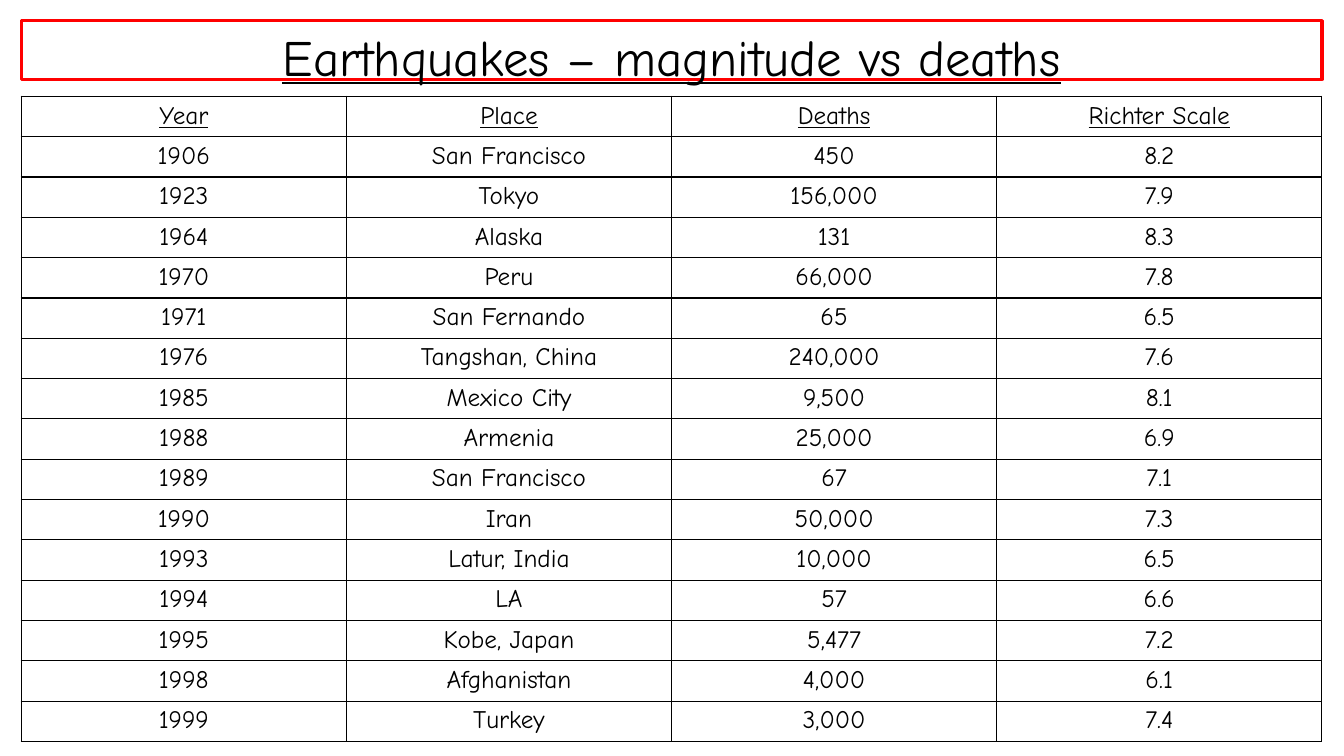
from lxml import etree
from pptx import Presentation
from pptx.dml.color import RGBColor
from pptx.enum.shapes import MSO_SHAPE
from pptx.enum.text import MSO_ANCHOR, PP_ALIGN
from pptx.oxml.ns import qn
from pptx.util import Pt

RECT = MSO_SHAPE.RECTANGLE
TOP = MSO_ANCHOR.TOP
CENTER = PP_ALIGN.CENTER

ROWS = [
    ("Year", "Place", "Deaths", "Richter Scale"),
    ("1906", "San Francisco", "450", "8.2"),
    ("1923", "Tokyo", "156,000", "7.9"),
    ("1964", "Alaska", "131", "8.3"),
    ("1970", "Peru", "66,000", "7.8"),
    ("1971", "San Fernando", "65", "6.5"),
    ("1976", "Tangshan, China", "240,000", "7.6"),
    ("1985", "Mexico City", "9,500", "8.1"),
    ("1988", "Armenia", "25,000", "6.9"),
    ("1989", "San Francisco", "67", "7.1"),
    ("1990", "Iran", "50,000", "7.3"),
    ("1993", "Latur, India", "10,000", "6.5"),
    ("1994", "LA", "57", "6.6"),
    ("1995", "Kobe, Japan", "5,477", "7.2"),
    ("1998", "Afghanistan", "4,000", "6.1"),
    ("1999", "Turkey", "3,000", "7.4"),
]


def color(value):
    return RGBColor.from_string(value)


class Deck:
    """Hold the style and the current slide, and draw its elements."""

    font = "Comic Neue"
    ink = "000000"
    accent = "FF0000"

    def __init__(self, width, height):
        self.prs = Presentation()
        self.prs.slide_width, self.prs.slide_height = Pt(width), Pt(height)
        self.s = self.prs.slides.add_slide(self.prs.slide_layouts[6])

    def text(self, tf, text, size, underline):
        p = tf.paragraphs[0]
        p.alignment = CENTER
        r = p.add_run()
        r.text = text
        style = {"name": self.font, "size": Pt(size), "underline": underline}
        for key, value in style.items():
            setattr(r.font, key, value)
        r.font.color.rgb = color(self.ink)

    def title(self, text, x, y, w, h):
        sp = self.s.shapes.add_shape(RECT, Pt(x), Pt(y), Pt(w), Pt(h))
        sp.shadow.inherit = False
        sp.fill.background()
        sp.line.color.rgb = color(self.accent)
        sp.line.width = Pt(2.25)
        tf = sp.text_frame
        frame = {"word_wrap": True, "vertical_anchor": TOP, "margin_top": Pt(3.6)}
        for key, value in frame.items():
            setattr(tf, key, value)
        self.text(tf, text, 36.3, True)

    def borders(self, cell):
        tcPr = cell._tc.get_or_add_tcPr()
        for i, side in enumerate(("lnL", "lnR", "lnT", "lnB")):
            ln = etree.Element(qn(f"a:{side}"), w=str(Pt(1)))
            fill = etree.SubElement(ln, qn("a:solidFill"))
            etree.SubElement(fill, qn("a:srgbClr"), val=self.ink)
            tcPr.insert(i, ln)

    def table(self, rows, x, y, w, row_h):
        n, m = len(rows), len(rows[0])
        frame = self.s.shapes.add_table(n, m, Pt(x), Pt(y), Pt(w), Pt(n * row_h))
        table = frame.table
        table.horz_banding = table.first_row = False
        for i, row in enumerate(rows):
            for j, value in enumerate(row):
                cell = table.cell(i, j)
                cell.fill.background()
                self.text(cell.text_frame, value, 18, i == 0)
                self.borders(cell)


def main():
    deck = Deck(960, 540)
    deck.table(ROWS, 15.2, 68.8, 929, 28.8)
    deck.title("Earthquakes – magnitude vs deaths", 15.2, 14.8, 929.2, 42)
    deck.prs.save("out.pptx")


if __name__ == "__main__":
    main()
